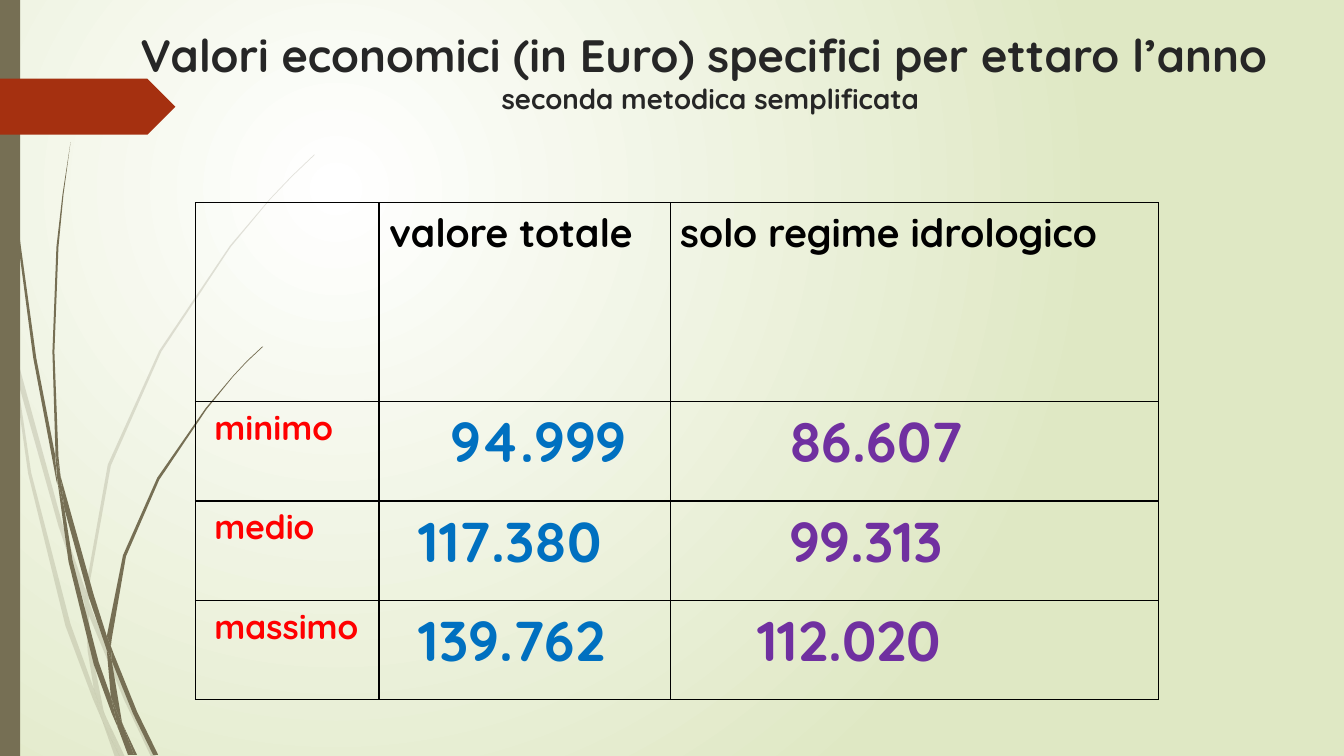
from lxml import etree
from pptx import Presentation
from pptx.dml.color import RGBColor as Rgb
from pptx.enum.shapes import MSO_SHAPE as Preset
from pptx.enum.text import MSO_ANCHOR as Anchor, MSO_AUTO_SIZE as AutoSize, PP_ALIGN as Align
from pptx.oxml.ns import qn
from pptx.util import Pt

COLORS = {
    "glow": "FFFFFF", "meadow": "DFE8C4", "stem": "766F54", "arrow": "A53010",
    "title": "262626", "ink": "000000", "label": "FF0000",
    "total": "0070C0", "water": "7030A0",
}
FONT = "Quicksand"
GRID = Pt(0.72)  # one unit of the grass outlines

PALE_GRASS = [
    [(11, 350), (9, 322), (0, 282), (0, 299), (10, 344)],
    [(58, 522), (84, 599), (85, 586), (62, 520), (14, 345), (17, 376)],
    [(92, 607), (88, 596), (88, 610), (123, 694), (150, 751), (155, 751), (127, 692)],
    [(119, 751), (124, 751), (105, 711)],
    [(93, 683), (70, 619), (31, 469), (17, 376), (11, 350), (28, 470), (65, 621),
     (92, 693), (101, 714), (99, 707)],
    [(84, 599), (87, 646), (93, 683), (96, 692), (105, 711), (103, 706), (91, 646),
     (88, 610), (88, 608)],
    [(88, 584), (110, 462), (160, 349), (229, 245), (268, 198), (290, 175), (312, 154),
     (312, 153), (289, 175), (268, 197), (228, 244), (158, 348), (107, 461), (85, 584),
     (85, 586), (88, 596)],
    [(101, 714), (114, 751), (119, 751)],
    [(88, 608), (88, 610), (88, 596), (85, 586), (84, 599)],
    [(96, 692), (93, 683), (99, 707), (101, 714), (119, 751), (105, 711)],
]
DARK_GRASS = [
    [(7, 110), (17, 233), (33, 355), (56, 477), (57, 481), (55, 457), (55, 453),
     (36, 355), (19, 232), (8, 109), (5, 48), (4, 0), (3, 0), (4, 48)],
    [(88, 592), (106, 645), (106, 633), (106, 631), (93, 590), (60, 472), (64, 505)],
    [(113, 649), (110, 641), (111, 656), (132, 708), (152, 749), (157, 749), (136, 706)],
    [(110, 691), (98, 657), (72, 556), (64, 505), (57, 477), (68, 557), (93, 659),
     (111, 708), (117, 722), (116, 717)],
    [(60, 472), (58, 453), (54, 349), (58, 245), (63, 193), (70, 141), (62, 193),
     (56, 245), (52, 349), (55, 449)],
    [(133, 749), (136, 749), (122, 719)],
    [(57, 477), (64, 505), (60, 472), (55, 449), (55, 453)],
    [(111, 633), (125, 552), (158, 476), (205, 406), (231, 374), (245, 359), (261, 344),
     (260, 344), (245, 358), (231, 373), (204, 405), (156, 474), (122, 551), (106, 631),
     (110, 641)],
    [(117, 722), (127, 749), (131, 749)],
    [(106, 645), (110, 691), (116, 706), (122, 719), (121, 716), (111, 656), (109, 651)],
    [(106, 645), (109, 651), (111, 656), (110, 641), (106, 631), (106, 633)],
    [(116, 706), (110, 691), (116, 717), (117, 722), (130, 749), (133, 749), (122, 719)],
]

# Each cell: text, size, colour, left margin
HEADER = [
    ("", 28, "ink", 7.2),
    ("valore totale", 28, "ink", 7.2),
    ("solo regime idrologico", 28, "ink", 7.2),
]
VALUES = [
    ("minimo", "94.999", 51, "86.607", 85),
    ("medio", "117.380", 28.5, "99.313", 85),
    ("massimo", "139.762", 28.5, "112.020", 62.5),
]


class SlidePainter:
    def __init__(self, slide):
        self.slide = slide

    def color(self, name):
        return Rgb.from_string(COLORS[name])

    def set_font(self, font, size, color):
        font.name, font.size, font.bold = FONT, Pt(size), True
        font.color.rgb = self.color(color)

    def paint(self, shape, color):
        shape.shadow.inherit = False
        shape.fill.solid()
        shape.fill.fore_color.rgb = self.color(color)
        shape.line.fill.background()

    def radial_background(self, inner, outer):
        fill = self.slide.background.fill
        fill.gradient()
        for stop, name in zip(fill.gradient_stops, (inner, outer)):
            stop.color.rgb = self.color(name)
        gradient = self.slide.element.find(".//" + qn("a:gradFill"))
        linear = gradient.find(qn("a:lin"))
        circle = etree.Element(qn("a:path"), path="circle")
        etree.SubElement(circle, qn("a:fillToRect"),
                         l="50000", t="50000", r="100000", b="100000")
        gradient.replace(linear, circle)

    def blade(self, outline, color, opacity=100):
        builder = self.slide.shapes.build_freeform(*outline[0], scale=GRID)
        builder.add_line_segments(outline[1:], close=True)
        blade = builder.convert_to_shape()
        self.paint(blade, color)
        if opacity < 100:
            tint = blade.element.spPr.find(qn("a:solidFill"))[0]
            etree.SubElement(tint, qn("a:alpha"), val=str(opacity * 1000))

    def preset(self, kind, left, top, width, height, color):
        shape = self.slide.shapes.add_shape(kind, Pt(left), Pt(top), Pt(width), Pt(height))
        self.paint(shape, color)

    def title(self, lines, left, top, width, height):
        """Fill the title with (text, size) lines, parted by line breaks."""
        title = self.slide.shapes.title
        title.left, title.top, title.width, title.height = map(Pt, (left, top, width, height))
        frame = title.text_frame
        frame.word_wrap, frame.auto_size = True, AutoSize.NONE
        frame.vertical_anchor = Anchor.TOP
        paragraph = frame.paragraphs[0]
        paragraph.alignment = Align.CENTER
        paragraph.line_spacing = 1.0
        for number, (text, size) in enumerate(lines):
            if number:
                paragraph.add_line_break()
            run = paragraph.add_run()
            run.text = text
            self.set_font(run.font, size, "title")

    def border(self, cell):
        properties = cell._tc.get_or_add_tcPr()
        for side in ("lnL", "lnR", "lnT", "lnB"):
            line = etree.SubElement(properties, qn(f"a:{side}"), w=str(Pt(1)))
            solid = etree.SubElement(line, qn("a:solidFill"))
            etree.SubElement(solid, qn("a:srgbClr"), val=COLORS["ink"])

    def table(self, rows, left, top, widths, heights):
        frame = self.slide.shapes.add_table(len(rows), len(widths), Pt(left), Pt(top),
                                            Pt(sum(widths)), Pt(sum(heights)))
        table = frame.table
        table.first_row = table.horz_banding = False
        for column, width in zip(table.columns, widths):
            column.width = Pt(width)
        for row, height, entries in zip(table.rows, heights, rows):
            row.height = Pt(height)
            for cell, (text, size, color, indent) in zip(row.cells, entries):
                self.border(cell)
                cell.fill.background()
                cell.margin_left = Pt(indent)
                cell.text = text
                self.set_font(cell.text_frame.paragraphs[0].font, size, color)


def main():
    deck = Presentation()
    deck.slide_width, deck.slide_height = Pt(960), Pt(540)
    painter = SlidePainter(deck.slides.add_slide(deck.slide_layouts[5]))
    painter.radial_background("glow", "meadow")
    for outline in PALE_GRASS:
        painter.blade(outline, "stem", opacity=20)
    for outline in DARK_GRASS:
        painter.blade(outline, "stem")
    painter.preset(Preset.RECTANGLE, 0, 0, 14.4, 540, "stem")
    painter.preset(Preset.PENTAGON, 0, 56.2, 125.3, 40, "arrow")
    painter.title([("Valori economici (in Euro) specifici per ettaro l’anno ", 32.4),
                   ("seconda metodica semplificata", 19.8)], 80, 16, 854.6, 70.6)
    body = [[(label, 24, "label", 13.5), (total, 40, "total", total_indent),
             (water, 40, "water", water_indent)]
            for label, total, total_indent, water, water_indent in VALUES]
    painter.table([HEADER] + body, 139.7, 144.9, [131, 208, 349], [142] + [71] * 3)
    deck.save("out.pptx")


if __name__ == "__main__":
    main()
